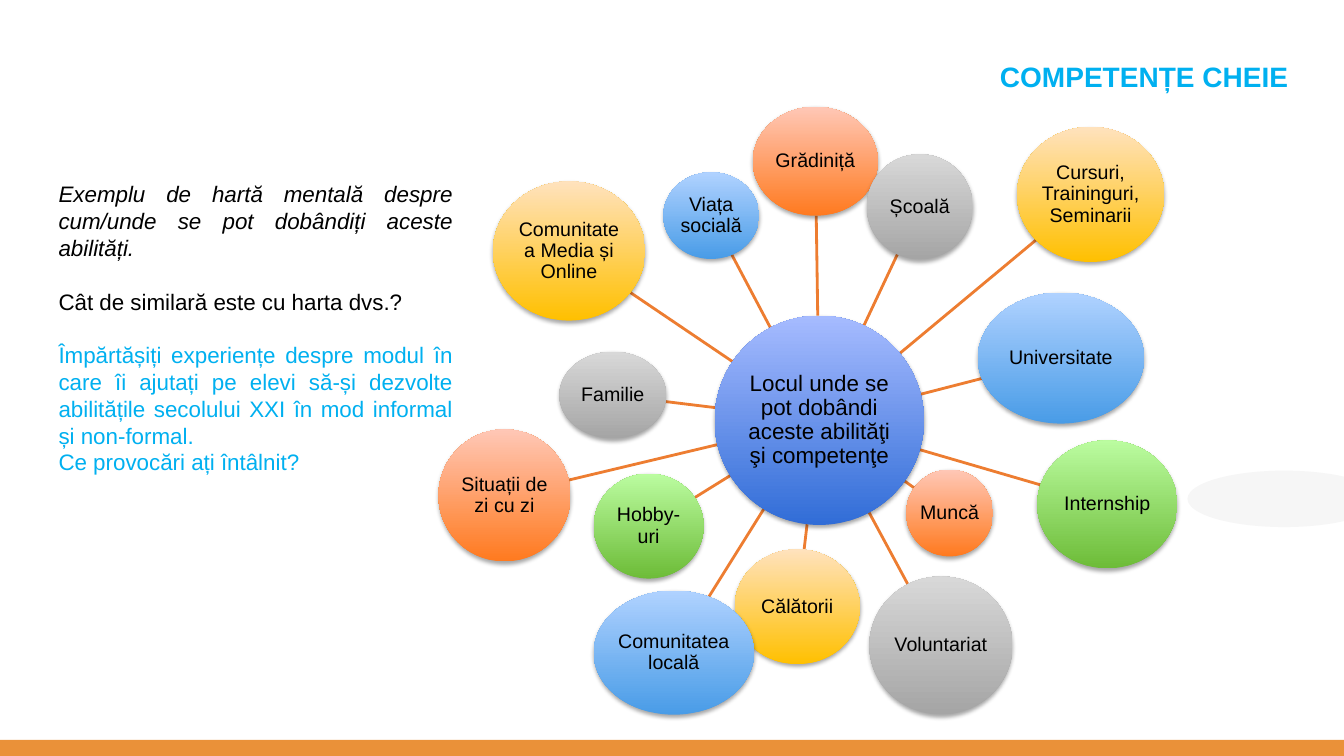
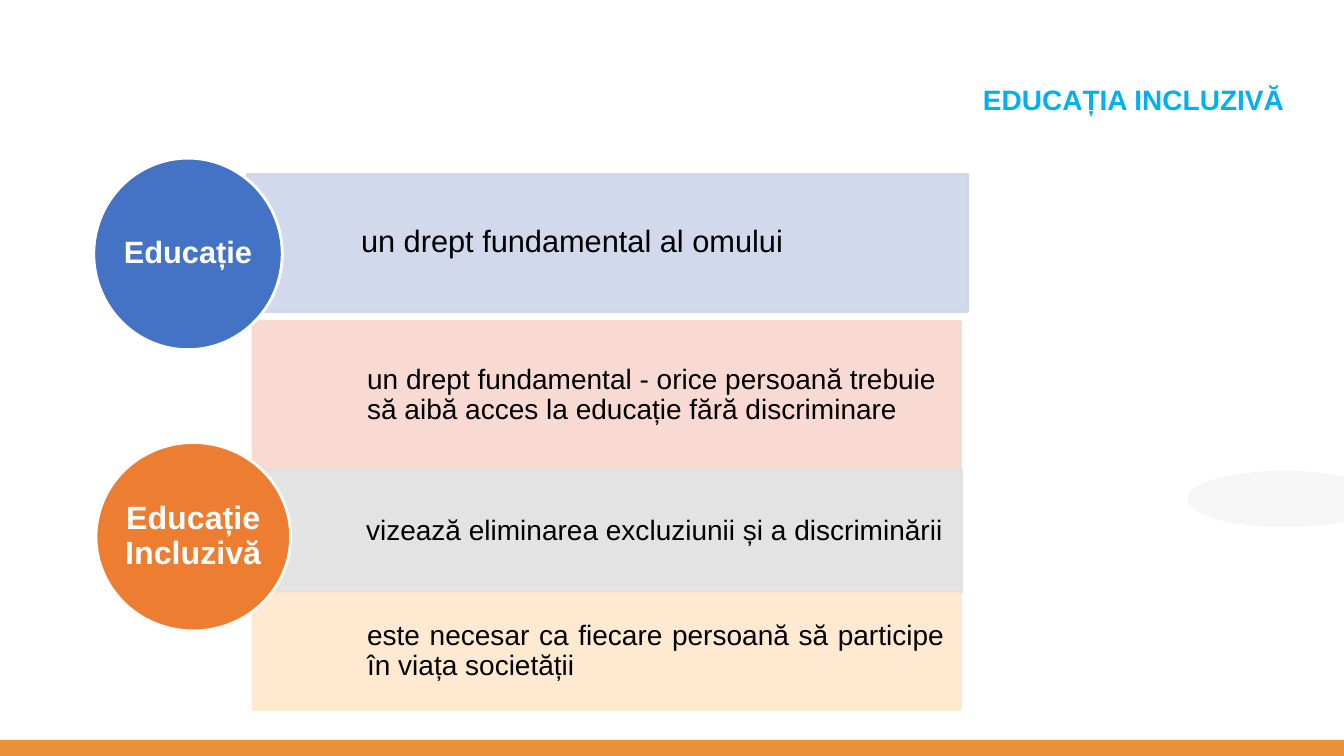
from math import hypot

from lxml import etree
from pptx import Presentation
from pptx.dml.color import RGBColor
from pptx.enum.shapes import MSO_CONNECTOR, MSO_SHAPE
from pptx.enum.text import MSO_ANCHOR, MSO_AUTO_SIZE, PP_ALIGN
from pptx.oxml.ns import qn
from pptx.util import Pt

OVAL, RECT = MSO_SHAPE.OVAL, MSO_SHAPE.RECTANGLE
LINE = MSO_CONNECTOR.STRAIGHT
TOP, MID = MSO_ANCHOR.TOP, MSO_ANCHOR.MIDDLE
LEFT, RIGHT = PP_ALIGN.LEFT, PP_ALIGN.RIGHT
MIDDLE, JUST = PP_ALIGN.CENTER, PP_ALIGN.JUSTIFY
FIXED = MSO_AUTO_SIZE.NONE

COLORS = {
    "black": "000000", "white": "FFFFFF", "cyan": "00B0F0",
    "band": "EA9139", "mist": "F5F5F5", "spoke": "ED7D31",
    "blue": "4472C4", "orange": "ED7D31",
    "lilac": "CFD5EA", "rose": "F8D7CE", "silver": "E1E1E1", "cream": "FFE8CC",
}
BLENDS = {
    "hub": ("316DD7", "A6BBFF"), "red": ("FF7A1F", "FFC7B6"),
    "gray": ("A5A5A5", "D8D8D8"), "gold": ("FFC000", "FFE2BD"),
    "sky": ("499CE7", "B0D2FF"), "green": ("6DBC38", "BBFCA0"),
}
WIDTH, HEIGHT = 960, 540

HUB = (510.5, 225.5, 149.5, 149.5)
BUBBLES = [
    ("Grădiniță", "red", (537.8, 76.3, 89.3, 77.8)),
    ("Școală", "gray", (619.2, 110.2, 75.6, 75)),
    ("Cursuri, Traininguri, Seminarii", "gold", (726.5, 90.7, 105.1, 96.5)),
    ("Universitate", "sky", (698.4, 209, 118.8, 93.6)),
    ("Internship", "green", (740.9, 314.6, 100.1, 91.4)),
    ("Muncă", "red", (647.3, 335.5, 62, 62)),
    ("Voluntariat", "gray", (621, 411.8, 102.2, 98.6)),
    ("Călătorii", "gold", (524.9, 392.4, 89.3, 82)),
    ("Comunitatea locală", "sky", (424.1, 421.9, 114.5, 88.6)),
    ("Hobby-uri", "green", (424.1, 338.4, 78.5, 74.9)),
    ("Situații de zi cu zi", "red", (313.2, 306.7, 94.3, 94.3)),
    ("Familie", "gray", (399.6, 251.3, 76.3, 61.9)),
    ("Comunitatea Media și Online", "gold", (352.1, 129.6, 108.7, 99.4)),
    ("Viața socială", "sky", (473.8, 123.1, 68.4, 61.9)),
]
NOTES = [
    ("Exemplu de hartă mentală despre cum/unde se pot dobândiți aceste abilități.",
     "black", True, 0),
    ("Cât de similară este cu harta dvs.?", "black", False, 19),
    ("Împărtășiți experiențe despre modul în care îi ajutați pe elevi să-și "
     "dezvolte abilitățile secolului XXI în mod informal și non-formal.",
     "cyan", False, 19),
    ("Ce provocări ați întâlnit?", "cyan", False, 0),
]
BARS = [
    ("un drept fundamental - orice persoană trebuie să aibă acces la educație "
     "fără discriminare", "rose", (180.7, 229.7, 505.4, 105.8), 20, LEFT),
    ("vizează eliminarea excluziunii și a discriminării",
     "silver", (180, 335.5, 506.9, 88), 20, JUST),
    ("este necesar ca fiecare persoană să participe în viața societății",
     "cream", (180.7, 424, 505.4, 82.8), 20, JUST),
    ("un drept fundamental al omului",
     "lilac", (176.4, 124.6, 514.8, 97.9), 22, LEFT),
]
DISCS = [
    ("Educație Incluzivă", "orange", (68.6, 316.1, 139, 134.6), 23),
    ("Educație", "blue", (67, 113, 134.6, 136.8), 22),
]


def apply(target, values):
    for name, value in values.items():
        setattr(target, name, value)


def center(box):
    left, top, width, height = box
    return left + width / 2, top + height / 2


def edge(box, goal):
    x, y = center(box)
    dx, dy = goal[0] - x, goal[1] - y
    scale = 1 / hypot(dx / (box[2] / 2), dy / (box[3] / 2))
    return x + dx * scale, y + dy * scale


class Deck:
    def __init__(self):
        self.show = Presentation()
        apply(self.show, {"slide_width": Pt(WIDTH), "slide_height": Pt(HEIGHT)})
        self.slide = None

    def page(self, layout, title, left, top):
        self.slide = self.show.slides.add_slide(self.show.slide_layouts[layout])
        if len(self.show.slides) == 1:
            self.back()
        head = self.slide.shapes.title
        self.place(head, (left, top, 684, 66))
        self.frame(head, TOP, (7.2, 3.6, 7.2, 3.6))
        self.words(head.text_frame.paragraphs[0], title, RIGHT, 20, "cyan",
                   bold=True)

    def back(self):
        tree = self.show.slide_master.shapes.element
        parts = [(OVAL, (848.2, 336.2, 138.2, 40.3), "mist", 89),
                 (RECT, (0, 528.5, WIDTH, 11.5), "band", 100)]
        for index, (kind, box, color, alpha) in enumerate(parts):
            shape = self.shape(kind, box, color, alpha=alpha)
            shape.element.nvSpPr.cNvPr.set("id", str(100 + index))
            tree.insert(2 + index, shape.element)

    def place(self, shape, box):
        names = ("left", "top", "width", "height")
        apply(shape, dict(zip(names, map(Pt, box))))

    def frame(self, shape, anchor, pads):
        names = ("margin_left", "margin_top", "margin_right", "margin_bottom")
        values = dict(zip(names, map(Pt, pads)))
        values.update(word_wrap=True, auto_size=FIXED, vertical_anchor=anchor)
        apply(shape.text_frame, values)

    def words(self, para, text, align, size, color, space=0.9, **style):
        apply(para, {"alignment": align, "line_spacing": space})
        run = para.add_run()
        run.text = text
        apply(run.font, {"name": "Arial", "size": Pt(size), **style})
        run.font.color.rgb = self.color(color)

    def color(self, name):
        return RGBColor.from_string(COLORS[name])

    def shape(self, kind, box, fill, line=None, alpha=100):
        shape = self.slide.shapes.add_shape(kind, *map(Pt, box))
        shape.shadow.inherit = False
        shape.fill.solid()
        shape.fill.fore_color.rgb = self.color(fill)
        if line:
            shape.line.color.rgb = self.color(line)
            shape.line.width = Pt(2)
        else:
            shape.line.fill.background()
        if alpha < 100:
            for tint in shape.element.spPr.iter(qn("a:srgbClr")):
                etree.SubElement(tint, qn("a:alpha"), val=str(alpha * 1000))
        return shape

    def label(self, shape, text, size, color, align=MIDDLE, pads=(0, 0, 0, 0),
              **style):
        self.frame(shape, MID, pads)
        self.words(shape.text_frame.paragraphs[0], text, align, size, color,
                   **style)

    def bubble(self, text, blend, box, size=14):
        shape = self.shape(OVAL, box, "white")
        shape.fill.gradient()
        shape.fill.gradient_angle = 90
        for stop, tint in zip(shape.fill.gradient_stops, BLENDS[blend]):
            stop.color.rgb = RGBColor.from_string(tint)
        glow = shape.element.spPr.find(qn("a:effectLst"))
        cast = etree.SubElement(
            glow, qn("a:outerShdw"), blurRad=str(Pt(3.1)), dist=str(Pt(1.8)),
            dir="5400000", rotWithShape="0")
        tint = etree.SubElement(cast, qn("a:srgbClr"), val=COLORS["black"])
        etree.SubElement(tint, qn("a:alpha"), val="35000")
        self.label(shape, text, size, "black")

    def spoke(self, start, end):
        line = self.slide.shapes.add_connector(LINE, *map(Pt, start + end))
        line.line.color.rgb = self.color("spoke")
        line.line.width = Pt(2)
        etree.SubElement(line.element.spPr, qn("a:effectLst"))

    def notes(self, items, box):
        body = self.slide.placeholders[1]
        self.place(body, box)
        self.frame(body, TOP, (7.2, 3.6, 7.2, 3.6))
        text = body.text_frame
        for index, (words, color, slant, gap) in enumerate(items):
            para = text.add_paragraph() if index else text.paragraphs[0]
            props = para._p.get_or_add_pPr()
            apply(para, {"space_before": Pt(gap), "space_after": Pt(0)})
            props.set("marL", "0")
            props.set("indent", "0")
            etree.SubElement(props, qn("a:buNone"))
            self.words(para, words, JUST, 16, color, space=1.0, italic=slant)

    def bar(self, text, color, box, size, align):
        shape = self.shape(RECT, box, color, line=color, alpha=90)
        self.label(shape, text, size, "black", align, (81.5, 11.5, 11.5, 11.5))

    def disc(self, text, color, box, size):
        shape = self.shape(OVAL, box, color, line="white")
        self.label(shape, text, size, "white", bold=True)


def main():
    deck = Deck()
    deck.page(1, "COMPETENȚE CHEIE", 243.4, 41.8)
    deck.notes(NOTES, (34.6, 125.3, 296, 220.3))
    for text, blend, box in BUBBLES:
        deck.spoke(edge(HUB, center(box)), edge(box, center(HUB)))
    deck.bubble("Locul unde se pot dobândi aceste abilităţi şi competenţe",
                "hub", HUB, 16)
    for bubble in BUBBLES:
        deck.bubble(*bubble)

    deck.page(5, "EDUCAȚIA INCLUZIVĂ", 240.5, 58.3)
    for bar in BARS:
        deck.bar(*bar)
    for disc in DISCS:
        deck.disc(*disc)
    deck.show.save("out.pptx")


if __name__ == "__main__":
    main()
